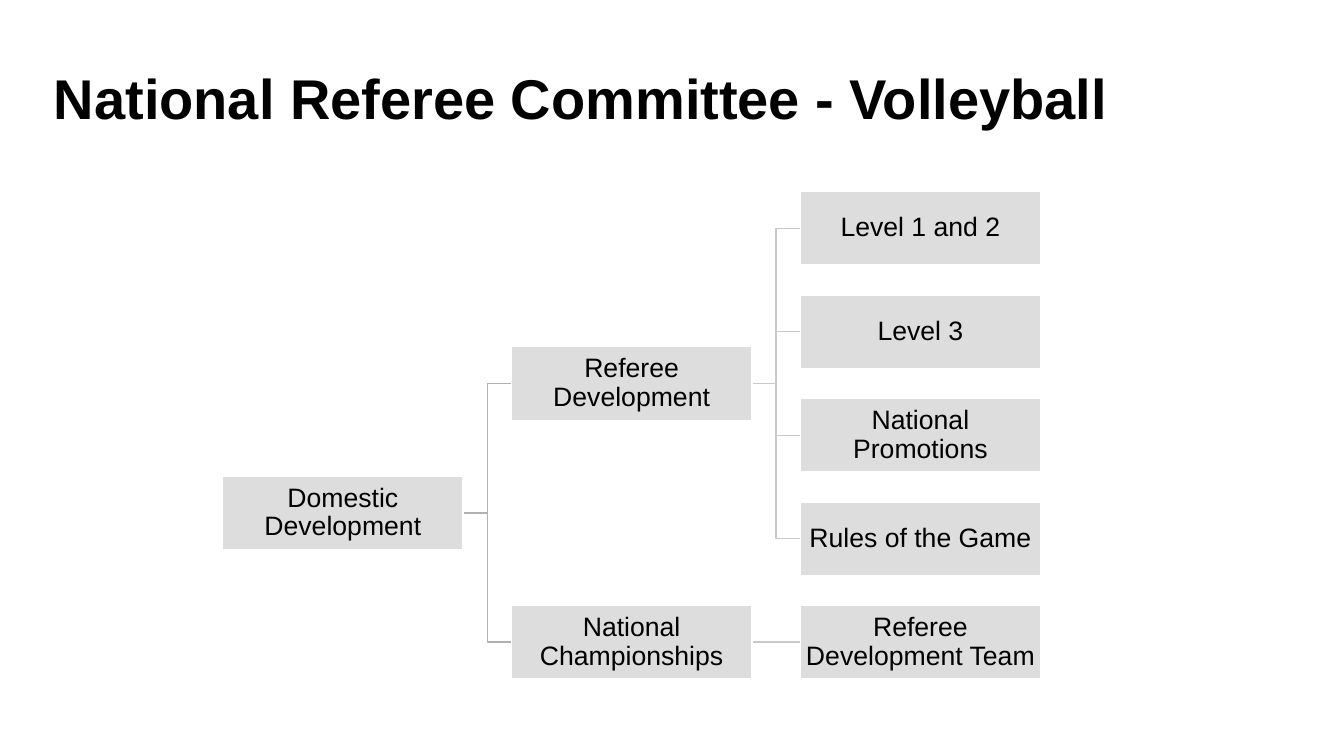
from lxml import etree
from pptx import Presentation
from pptx.dml.color import RGBColor
from pptx.enum.shapes import MSO_CONNECTOR, MSO_SHAPE
from pptx.enum.text import MSO_ANCHOR, PP_ALIGN
from pptx.oxml.ns import qn
from pptx.util import Pt

ELBOW, STRAIGHT = MSO_CONNECTOR.ELBOW, MSO_CONNECTOR.STRAIGHT
RECTANGLE = MSO_SHAPE.RECTANGLE
MIDDLE = MSO_ANCHOR.MIDDLE
LEFT, CENTER = PP_ALIGN.LEFT, PP_ALIGN.CENTER
RIGHT_SITE, LEFT_SITE = 3, 1

BOX_WIDTH, BOX_HEIGHT = 343.4, 105.2
FIRST_LEFT, COLUMN_STEP = 318.2, 412.6
FIRST_MIDDLE, ROW_STEP = 326.2, 147.8
LINK_COLORS = ["B1B1B1", "C9C9C9"]


def color(hex_string):
    return RGBColor.from_string(hex_string)


def write(shape, text, size, inset, align, bold=False):
    frame = shape.text_frame
    frame.word_wrap = True
    frame.vertical_anchor = MIDDLE
    frame.margin_left = frame.margin_right = Pt(inset)
    frame.margin_top = frame.margin_bottom = Pt(inset)
    para = frame.paragraphs[0]
    para.text = text
    para.alignment = align
    para.font.name = "Arial"
    para.font.size = Pt(size)
    para.font.bold = bold
    para.font.color.rgb = color("000000")
    return para


deck = Presentation()
deck.slide_width, deck.slide_height = Pt(1920.24), Pt(1080)
page = deck.slides.add_slide(deck.slide_layouts[6])

title = page.shapes.add_textbox(Pt(72.7), Pt(48.2), Pt(1653.8), Pt(180))
write(title, "National Referee Committee - Volleyball", 80, 4.3, LEFT, bold=True)

root = "Domestic Development"
branches = {
    "Referee Development": [
        "Level 1 and 2", "Level 3", "National Promotions", "Rules of the Game",
    ],
    "National Championships": ["Referee Development Team"],
}

# Leaves take consecutive rows; each parent sits halfway along its children.
places, links = {}, []
row = 0
for branch, leaves in branches.items():
    for leaf in leaves:
        places[leaf] = (2, row)
        links.append((branch, leaf))
        row += 1
    places[branch] = (1, (places[leaves[0]][1] + row - 1) / 2)
    links.append((root, branch))
branch_rows = [places[branch][1] for branch in branches]
places[root] = (0, sum(branch_rows) / len(branch_rows))

# Connectors come first so that they lie behind the boxes.
connectors = []
for parent, child in links:
    column, parent_row = places[parent]
    child_row = places[child][1]
    start = FIRST_LEFT + column * COLUMN_STEP + BOX_WIDTH
    end = FIRST_LEFT + (column + 1) * COLUMN_STEP
    connector = page.shapes.add_connector(
        STRAIGHT if parent_row == child_row else ELBOW,
        Pt(start), Pt(FIRST_MIDDLE + parent_row * ROW_STEP),
        Pt(end), Pt(FIRST_MIDDLE + child_row * ROW_STEP))
    connector.line.color.rgb = color(LINK_COLORS[column])
    connector.line.width = Pt(2)
    etree.SubElement(connector._element.spPr, qn("a:effectLst"))
    connectors.append(connector)

boxes = {}
for name, (column, row) in places.items():
    box = page.shapes.add_shape(
        RECTANGLE,
        Pt(FIRST_LEFT + column * COLUMN_STEP),
        Pt(FIRST_MIDDLE + row * ROW_STEP - BOX_HEIGHT / 2),
        Pt(BOX_WIDTH), Pt(BOX_HEIGHT))
    box.shadow.inherit = False
    box.fill.solid()
    box.fill.fore_color.rgb = color("DDDDDD")
    box.line.color.rgb = color("FFFFFF")
    box.line.width = Pt(2)
    para = write(box, name, 38, 2, CENTER)
    para.line_spacing = 0.9
    boxes[name] = box

for connector, (parent, child) in zip(connectors, links):
    connector.begin_connect(boxes[parent], RIGHT_SITE)
    connector.end_connect(boxes[child], LEFT_SITE)

deck.save("out.pptx")
